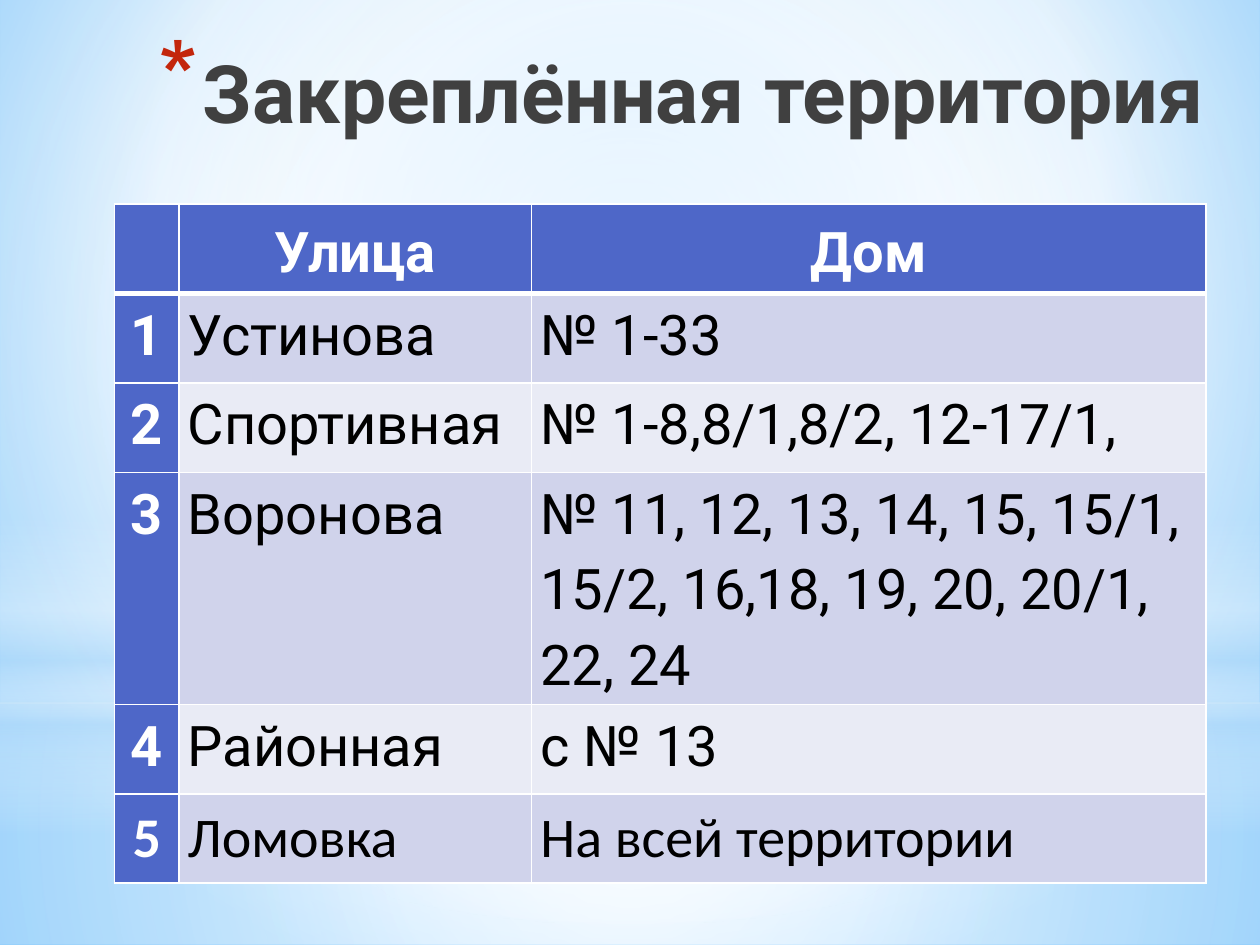
from lxml import etree
from pptx import Presentation
from pptx.dml.color import RGBColor
from pptx.enum import shapes, text
from pptx.oxml import parse_xml
from pptx.oxml.ns import nsdecls, qn
from pptx.util import Inches, Pt

TITLE = "Закреплённая территория"
ROWS = [
    ("", "Улица", "Дом"),
    ("1", "Устинова", "№ 1-33"),
    ("2", "Спортивная", "№ 1-8,8/1,8/2, 12-17/1,"),
    ("3", "Воронова", "№ 11, 12, 13, 14, 15, 15/1, 15/2, 16,18, 19, 20, 20/1, 22, 24"),
    ("4", "Районная", "с № 13"),
    ("5", "Ломовка", "На всей территории"),
]
COLS = [0.51, 2.8, 5.35]
HEIGHTS = [0.71, 0.71, 0.71, 1.47, 0.71, 0.71]
WHITE, BLACK, BLUE = "FFFFFF", "000000", "4E67C8"
BANDS = ["E9EBF5", "D0D3EB"]
CENTRE = (50, 50, 50, 50)

# Gradient stops are (position %, colour, opacity %)
SKY = [(0, "9ED5FF", 100), (60, WHITE, 100), (100, "5BB9FF", 100)]
RECT, OVAL = shapes.MSO_SHAPE.RECTANGLE, shapes.MSO_SHAPE.OVAL
GLOWS = [  # shape, top, height, stops, centre (None: runs downwards)
    (RECT, 5.58, 1.92, [(0, WHITE, 91), (37, WHITE, 76), (100, "B4DCFA", 79)], CENTRE),
    (RECT, 0, 5.58, [(0, WHITE, 89), (48, WHITE, 62), (100, "B4DCFA", 79)], CENTRE),
    (RECT, 4.12, 2.5, [(0, WHITE, 0), (29, WHITE, 30), (45, "B4DCFA", 40),
                       (55, WHITE, 26), (65, "B4DCFA", 60), (100, WHITE, 0)], None),
    (OVAL, 1.75, 5.58, [(0, WHITE, 100), (56, WHITE, 0)], CENTRE),
]


def rgb(value):
    return RGBColor.from_string(value)


def set_gradient(fill, element, stops, centre):
    """Swap the first solid fill inside element for a gradient."""
    fill.solid()
    fill.fore_color.rgb = rgb(WHITE)
    gs = "".join(
        f'<a:gs pos="{pos * 1000}"><a:srgbClr val="{color}">'
        f'<a:alpha val="{alpha * 1000}"/></a:srgbClr></a:gs>'
        for pos, color, alpha in stops)
    if centre:
        rect = " ".join(f'{side}="{v * 1000}"' for side, v in zip("ltrb", centre))
        way = f'<a:path path="circle"><a:fillToRect {rect}/></a:path>'
    else:
        way = '<a:lin ang="5400000" scaled="0"/>'
    solid = element.find(".//" + qn("a:solidFill"))
    solid.getparent().replace(solid, parse_xml(
        f'<a:gradFill {nsdecls("a")} rotWithShape="1"><a:gsLst>{gs}</a:gsLst>{way}</a:gradFill>'))


def set_borders(cell, bottom=1, top=1):
    tc_pr = cell._tc.get_or_add_tcPr()
    for i, (side, width) in enumerate(zip("LRTB", (1, 1, top, bottom))):
        tc_pr.insert(i, parse_xml(
            f'<a:ln{side} {nsdecls("a")} w="{Pt(width)}"><a:solidFill>'
            f'<a:srgbClr val="{WHITE}"/></a:solidFill></a:ln{side}>'))


def set_font(font, size, name, color, bold):
    font.size, font.name, font.bold = Pt(size), name, bold
    font.color.rgb = rgb(color)


def add_backdrop(s):
    set_gradient(s.background.fill, s.element, SKY, (20, 10, 20, 60))
    for kind, top, height, stops, centre in GLOWS:
        sp = s.shapes.add_shape(kind, 0, Inches(top), Inches(10), Inches(height))
        sp.shadow.inherit = False
        sp.line.fill.background()
        set_gradient(sp.fill, sp.element, stops, centre)


def add_title(s):
    tf = s.shapes.add_textbox(Inches(0.28), Inches(0.29), Inches(9.37), Inches(1.25)).text_frame
    tf.word_wrap = True
    tf.vertical_anchor = text.MSO_ANCHOR.TOP
    p = tf.paragraphs[0]
    p.text = TITLE
    p.alignment = text.PP_ALIGN.RIGHT
    set_font(p.font, 46, "Roboto", "404040", True)
    p_pr = p._p.get_or_add_pPr()
    p_pr.set("marL", str(Inches(0.35)))
    p_pr.set("indent", str(-Inches(0.35)))
    bullet = [
        f'<a:buClr {nsdecls("a")}><a:srgbClr val="C3260C"/></a:buClr>',
        f'<a:buSzPct {nsdecls("a")} val="128000"/>',
        f'<a:buChar {nsdecls("a")} char="*"/>',
    ]
    for i, xml in enumerate(bullet):
        p_pr.insert(i, parse_xml(xml))


def add_table(s):
    table = s.shapes.add_table(len(ROWS), len(COLS), Inches(0.91), Inches(1.62),
                               Inches(sum(COLS)), Inches(sum(HEIGHTS))).table
    for col, width in zip(table.columns, COLS):
        col.width = Inches(width)
    for row, height in zip(table.rows, HEIGHTS):
        row.height = Inches(height)
    for r, values in enumerate(ROWS):
        for c, value in enumerate(values):
            cell = table.cell(r, c)
            head = r == 0 or c == 0
            cell.fill.solid()
            cell.fill.fore_color.rgb = rgb(BLUE if head else BANDS[r % 2])
            set_borders(cell, bottom=3 if r == 0 else 1, top=3 if r == 1 else 1)
            cell.margin_left = cell.margin_right = Inches(0.07)
            cell.margin_top = cell.margin_bottom = 0
            cell.vertical_anchor = text.MSO_ANCHOR.MIDDLE if r == 0 else text.MSO_ANCHOR.TOP
            p = cell.text_frame.paragraphs[0]
            p.text = value
            p.line_spacing = 1.15
            p.alignment = text.PP_ALIGN.CENTER if head else text.PP_ALIGN.LEFT
            name = "Calibri" if r == len(ROWS) - 1 else "Roboto"
            set_font(p.font, 32, name, WHITE if head else BLACK, head)


prs = Presentation()
prs.slide_width, prs.slide_height = Inches(10), Inches(7.5)
s = prs.slides.add_slide(prs.slide_layouts[6])
add_backdrop(s)
add_title(s)
add_table(s)
prs.save("out.pptx")
